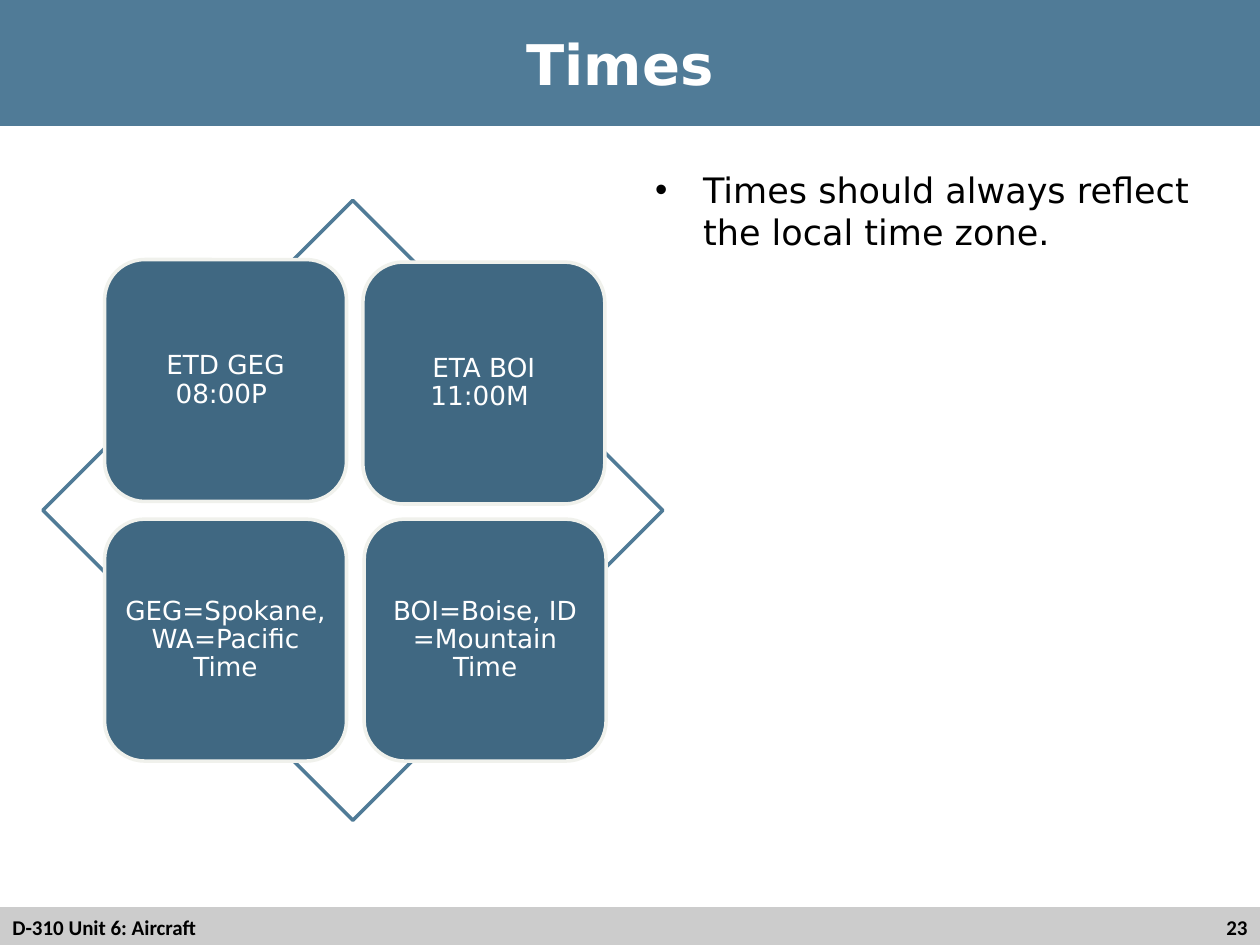
from lxml import etree
from pptx import Presentation
from pptx.dml.color import RGBColor
from pptx.enum.shapes import MSO_SHAPE
from pptx.enum.text import MSO_ANCHOR, MSO_AUTO_SIZE, PP_ALIGN
from pptx.oxml.ns import qn
from pptx.util import Inches, Pt

RECT, DIAMOND, ROUNDED = MSO_SHAPE.RECTANGLE, MSO_SHAPE.DIAMOND, MSO_SHAPE.ROUNDED_RECTANGLE
LEFT, CENTER, RIGHT = PP_ALIGN.LEFT, PP_ALIGN.CENTER, PP_ALIGN.RIGHT
TOP, MIDDLE = MSO_ANCHOR.TOP, MSO_ANCHOR.MIDDLE
NO_FIT = MSO_AUTO_SIZE.NONE

BLUE = RGBColor(0x50, 0x7B, 0x97)
DARK_BLUE = RGBColor(0x40, 0x68, 0x82)
GRAY = RGBColor(0xCC, 0xCC, 0xCC)
OFF_WHITE = RGBColor(0xF0, 0xF1, 0xEC)
WHITE = RGBColor(0xFF, 0xFF, 0xFF)
BLACK = RGBColor(0, 0, 0)

COLUMNS, ROWS = 100, 75
TILE, TILE_LEFT, TILE_TOP, TILE_STEP = 19.2, 8.3, 20.6, 20.6
TILES = [
    ("ETD GEG 08:00P ", 0, 0, 0, 0),
    ("ETA BOI 11:00M ", 1, 0, -0.1, 0.2),
    ("GEG=Spokane, WA=Pacific Time", 0, 1, 0, 0),
    ("BOI=Boise, ID =Mountain Time", 1, 1, 0, 0),
]


class Deck:
    body_font = "DejaVu Sans"
    footer_font = "Calibri"

    def __init__(self):
        self.prs = Presentation()
        self.prs.slide_width, self.prs.slide_height = Inches(10), Inches(7.5)
        self.slide = self.prs.slides.add_slide(self.prs.slide_layouts[1])

    def box(self, col, row, cols, rows):
        x, y = self.prs.slide_width / COLUMNS, self.prs.slide_height / ROWS
        return int(col * x), int(row * y), int(cols * x), int(rows * y)

    def place(self, s, grid):
        s.left, s.top, s.width, s.height = self.box(*grid)

    def label(self, s, text, size, color, align=LEFT, anchor=MIDDLE, bold=False,
              font=body_font, inset=(0.1, 0.05)):
        tf = s.text_frame
        tf.text = text
        tf.word_wrap, tf.auto_size, tf.vertical_anchor = True, NO_FIT, anchor
        tf.margin_left = tf.margin_right = Inches(inset[0])
        tf.margin_top = tf.margin_bottom = Inches(inset[1])
        p = tf.paragraphs[0]
        p.alignment, p.space_before = align, Pt(0)
        f = p.runs[0].font
        f.name, f.size, f.bold = font, Pt(size), bold
        f.color.rgb = color
        return p

    def shape(self, kind, grid, fill, line=None):
        s = self.slide.shapes.add_shape(kind, *self.box(*grid))
        s.shadow.inherit = False
        s.fill.solid()
        s.fill.fore_color.rgb = fill
        if line is None:
            s.line.fill.background()
        else:
            s.line.color.rgb, s.line.width = line, Pt(2)
        return s

    def title(self, text, grid):
        s = self.slide.shapes.title
        self.place(s, grid)
        s.fill.solid()
        s.fill.fore_color.rgb = BLUE
        self.label(s, text, 32, WHITE, CENTER, bold=True)

    def bullet(self, text, grid):
        s = self.slide.placeholders[1]
        self.place(s, grid)
        p = self.label(s, text, 20, BLACK, anchor=TOP)
        pPr = p._p.get_or_add_pPr()
        pPr.set("marL", str(Inches(0.38)))
        pPr.set("indent", str(-Inches(0.38)))
        etree.SubElement(pPr, qn("a:buChar")).set("char", "•")

    def tile(self, text, grid):
        s = self.shape(ROUNDED, grid, DARK_BLUE, OFF_WHITE)
        p = self.label(s, text, 15, WHITE, CENTER, inset=(0.06, 0.06))
        p.line_spacing = 0.9

    def footer(self, text, grid, align):
        s = self.slide.shapes.add_textbox(*self.box(*grid))
        self.label(s, text, 12, BLACK, align, bold=True, font=self.footer_font)


def main():
    deck = Deck()
    deck.shape(RECT, (0, 72, 100, 3.2), GRAY)
    deck.footer("D-310 Unit 6: Aircraft", (0, 72, 60, 3.2), LEFT)
    deck.footer("23", (76.7, 72, 23.3, 3.2), RIGHT)
    deck.title("Times ", (0, 0, 100, 10))
    deck.shape(DIAMOND, (3.4, 15.9, 49.2, 49.2), WHITE, BLUE)
    for text, col, row, dx, dy in TILES:
        left = TILE_LEFT + col * TILE_STEP + dx
        top = TILE_TOP + row * TILE_STEP + dy
        deck.tile(text, (left, top, TILE, TILE))
    deck.bullet("Times should always reflect the local time zone.", (51, 12.9, 47.5, 40.4))
    deck.prs.save("out.pptx")


if __name__ == "__main__":
    main()
